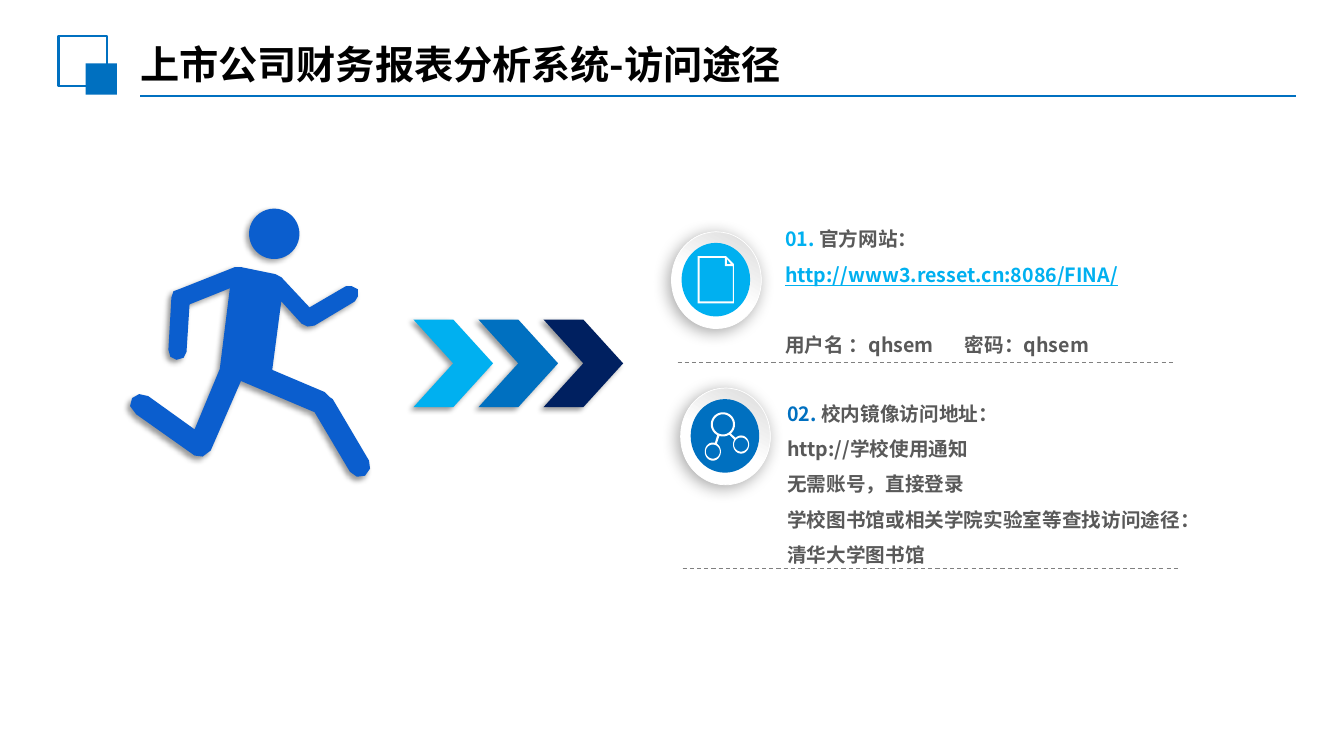
from math import cos, radians, sin

from lxml.etree import SubElement
from pptx import Presentation
from pptx.dml.color import RGBColor
from pptx.enum.dml import MSO_LINE_DASH_STYLE as Dash
from pptx.enum.shapes import MSO_CONNECTOR as Connector, MSO_SHAPE as Shape
from pptx.enum.text import MSO_ANCHOR as Anchor
from pptx.oxml.ns import qn
from pptx.util import Inches, Pt

COLORS = {
    "blue": "0070C0", "sky": "00B0F0", "navy": "002060", "runner": "0B5ECE",
    "black": "000000", "text": "595959", "rule": "808080",
    "white": "FFFFFF", "silver": "D9D9D9",
}
SOFT_SHADOW = (40, 4, 3)
DEEP_SHADOW = (34, 12, 3)

RUNNER_BODY = [
    (2.33, 2.65), (2.39, 2.65), (2.73, 2.72), (2.79, 2.75), (3.07, 3.05),
    (3.43, 2.84), (3.49, 2.84), (3.55, 2.87), (3.55, 2.94), (3.52, 2.99),
    (3.12, 3.23), (3.05, 3.24), (2.99, 3.21), (2.79, 2.99), (2.7, 3.67),
    (3.22, 3.89), (3.27, 3.94), (3.3, 3.96), (3.66, 4.57), (3.67, 4.65),
    (3.62, 4.72), (3.54, 4.73), (3.47, 4.68), (3.12, 4.09), (2.39, 3.78),
    (2.09, 4.47), (2.01, 4.53), (1.93, 4.52), (1.35, 4.11), (1.29, 4.03),
    (1.31, 3.95), (1.38, 3.91), (1.47, 3.93), (1.93, 4.26), (2.18, 3.66),
    (2.28, 2.86), (1.88, 3.02), (1.85, 3.49), (1.82, 3.55), (1.75, 3.57),
    (1.69, 3.54), (1.67, 3.47), (1.7, 2.95), (1.72, 2.89), (1.8, 2.86),
]
PAGE_ICON = [
    [(6.92, 2.54), (7.2, 2.54), (7.28, 2.62), (7.28, 3.01), (6.92, 3.01)],
    [(6.94, 2.56), (6.94, 2.99), (7.27, 2.99), (7.27, 2.64), (7.19, 2.64), (7.19, 2.56)],
    [(7.21, 2.57), (7.21, 2.62), (7.25, 2.62)],
]


def arc(center, radii, start=0, end=360, steps=40):
    angles = [radians(start + (end - start) * step / steps) for step in range(steps + 1)]
    return [(center[0] + radii[0] * cos(a), center[1] + radii[1] * sin(a)) for a in angles]


def network_icon():
    hub, left, right = (7.17, 4.21), (7.07, 4.48), (7.35, 4.41)
    hub_size, node_size = (0.12, 0.12), (0.08, 0.09)
    outline = (
        arc(hub, hub_size, 49, -242)
        + arc(left, node_size, -75, -420)
        + arc(hub, hub_size, 107, 58)
        + arc(right, node_size, 213, -133)
    )
    holes = [arc(hub, (0.1, 0.1)), arc(left, (0.07, 0.07)), arc(right, (0.07, 0.07))]
    return [outline] + holes


class SlidePainter:
    font_name = "Noto Sans CJK SC"

    def __init__(self, page):
        self.page = page

    def color(self, name):
        return RGBColor.from_string(COLORS[name])

    def finish(self, shape, fill=None, line=None, width=1, shadow=None):
        if fill:
            shape.fill.solid()
            shape.fill.fore_color.rgb = self.color(fill)
        else:
            shape.fill.background()
        if line:
            shape.line.color.rgb = self.color(line)
            shape.line.width = Pt(width)
        else:
            shape.line.fill.background()
        shape.shadow.inherit = False
        if shadow:
            alpha, blur, distance = shadow
            effects = shape._element.spPr.find(qn("a:effectLst"))
            outer = SubElement(effects, qn("a:outerShdw"), blurRad=str(Pt(blur)),
                               dist=str(Pt(distance)), dir=str(135 * 60000),
                               algn="tr", rotWithShape="0")
            tint = SubElement(outer, qn("a:srgbClr"), val=COLORS["black"])
            SubElement(tint, qn("a:alpha"), val=str(alpha * 1000))
        return shape

    def preset(self, kind, at, **style):
        shape = self.page.shapes.add_shape(kind, *map(Inches, at))
        return self.finish(shape, **style)

    def outline(self, contours, **style):
        first, *others = [[(Inches(x), Inches(y)) for x, y in contour] for contour in contours]
        builder = self.page.shapes.build_freeform(*first[0])
        builder.add_line_segments(first[1:])
        for contour in others:
            builder.move_to(*contour[0])
            builder.add_line_segments(contour[1:])
        return self.finish(builder.convert_to_shape(), **style)

    def line(self, start, end, color, width, dash=None):
        rule = self.page.shapes.add_connector(Connector.STRAIGHT, *map(Inches, start + end))
        rule.line.color.rgb = self.color(color)
        rule.line.width = Pt(width)
        if dash:
            rule.line.dash_style = dash
        SubElement(rule._element.spPr, qn("a:effectLst"))

    def badge(self, left, top, color, icon):
        rim = self.preset(Shape.OVAL, (left, top, 0.89, 0.96), line="white",
                          width=0.5, shadow=DEEP_SHADOW)
        rim.fill.gradient()
        rim.fill.gradient_angle = 60
        stops = ((0.45, "white"), (1, "silver"))
        for stop, (position, name) in zip(rim.fill.gradient_stops, stops):
            stop.position = position
            stop.color.rgb = self.color(name)
        self.preset(Shape.OVAL, (left + 0.1, top + 0.11, 0.68, 0.73), fill=color)
        self.outline(icon, fill="white")

    def text(self, at, paragraphs, size, spacing=1, insets=(0.1, 0.05), anchor=Anchor.TOP):
        box = self.page.shapes.add_textbox(*map(Inches, at))
        frame = box.text_frame
        frame.word_wrap = True
        frame.vertical_anchor = anchor
        frame.margin_left = frame.margin_right = Inches(insets[0])
        frame.margin_top = frame.margin_bottom = Inches(insets[1])
        for index, item in enumerate(paragraphs):
            para = frame.paragraphs[0] if index == 0 else frame.add_paragraph()
            if "tab" in item:
                tabs = SubElement(para._p.get_or_add_pPr(), qn("a:tabLst"))
                SubElement(tabs, qn("a:tab"), pos=str(Inches(item["tab"])), algn="l")
            para.line_spacing = spacing
            if "before" in item:
                para.space_before = Pt(item["before"])
            para.font.name = self.font_name
            para.font.size = Pt(size)
            para.font.bold = True
            para.font.underline = item.get("underline")
            defaults = para._p.pPr.find(qn("a:defRPr"))
            SubElement(defaults, qn("a:ea"), typeface=self.font_name)
            spans = item["spans"]
            if len(spans) == 1:
                para.font.color.rgb = self.color(spans[0][1])
            for words, color in spans:
                span = para.add_run()
                span.text = words
                if len(spans) > 1:
                    span.font.color.rgb = self.color(color)


def main():
    deck = Presentation()
    deck.slide_width, deck.slide_height = Inches(13.33), Inches(7.5)
    painter = SlidePainter(deck.slides.add_slide(deck.slide_layouts[6]))

    painter.line((1.39, 0.95), (12.85, 0.95), "blue", 1.25)
    painter.preset(Shape.RECTANGLE, (0.58, 0.36, 0.48, 0.49), line="blue", width=1.5)
    painter.preset(Shape.RECTANGLE, (0.85, 0.63, 0.31, 0.31), fill="blue")
    painter.text((1.32, 0.39, 8.6, 0.48),
                 [{"spans": [("上市公司财务报表分析系统-访问途径", "black")]}],
                 28, insets=(0.07, 0.04), anchor=Anchor.MIDDLE)

    for step, color in enumerate(("navy", "blue", "sky")):
        painter.preset(Shape.CHEVRON, (5.39 - 0.645 * step, 3.17, 0.79, 0.87),
                       fill=color, shadow=SOFT_SHADOW)
    runner_head = arc((2.72, 2.32), (0.25, 0.25))
    painter.outline([RUNNER_BODY, runner_head], fill="runner", shadow=SOFT_SHADOW)

    painter.text((7.69, 2.09, 4.69, 1.7), [
        {"spans": [("01. ", "sky"), ("官方网站：", "text")]},
        {"spans": [("http://www3.resset.cn:8086/FINA/", "sky")], "underline": True},
        {"spans": [("用户名 ：qhsem\t密码：qhsem", "text")], "before": 25, "tab": 1.78},
    ], 14, spacing=1.5)
    mirror_lines = ("http://学校使用通知", "无需账号，直接登录",
                    "学校图书馆或相关学院实验室等查找访问途径：", "清华大学图书馆")
    painter.text((7.71, 3.82, 4.13, 2.57),
                 [{"spans": [("02. ", "blue"), ("校内镜像访问地址：", "text")]}]
                 + [{"spans": [(words, "text")]} for words in mirror_lines],
                 14, spacing=1.5)

    for left, top in ((6.72, 3.6), (6.77, 5.64)):
        painter.line((left, top), (left + 4.92, top), "rule", 0.75, Dash.DASH)
    painter.badge(6.66, 2.3, "sky", PAGE_ICON)
    painter.badge(6.75, 3.85, "blue", network_icon())
    deck.save("out.pptx")


if __name__ == "__main__":
    main()
